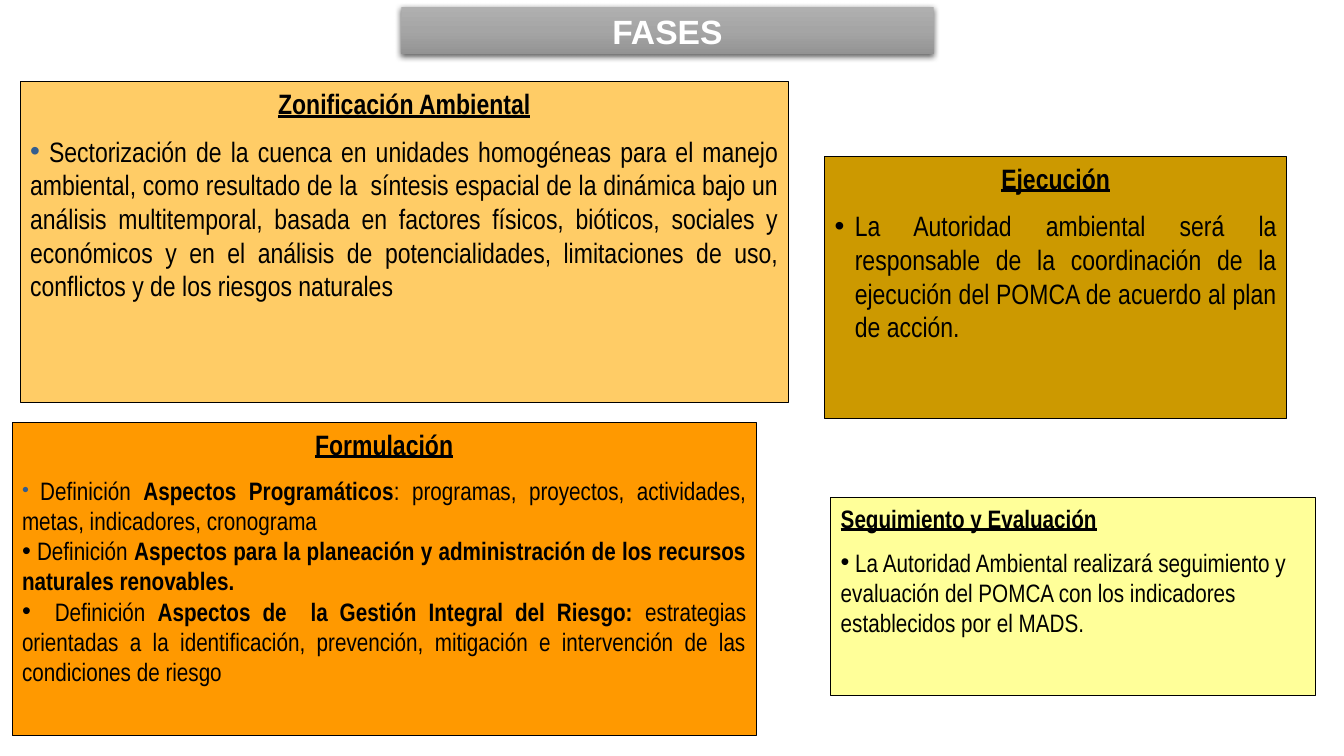
"""Build the slide that describes the phases of the plan."""
import copy

import pptx
import pptx.dml.color
import pptx.enum.shapes
import pptx.enum.text
import pptx.oxml
import pptx.oxml.ns
import pptx.util

Inches, Pt = pptx.util.Inches, pptx.util.Pt
ALIGN, ANCHOR = pptx.enum.text.PP_ALIGN, pptx.enum.text.MSO_ANCHOR
NS = pptx.oxml.ns.nsdecls("a")
BLACK, BLUE, WHITE = "000000", "335D8F", "FFFFFF"

TITLE = "FASES"
TITLE_BOX = (3.98, 0.07, 5.28, 0.47)
TITLE_STOPS = [(0, "AFAFAF"), (0.5, "A5A5A5"), (1, "939393")]

PHASES = [
    dict(head="Formulación", box=(0.12, 4.19, 7.38, 3.11), fill="FF9900",
         head_size=20, size=18, lead_size=14, head_align=ALIGN.CENTER,
         align=ALIGN.JUSTIFY, after=0, hang=0, items=[
             [(" ", "lead"), ("Definición ", ""), ("Aspectos Programáticos", "bold"),
              (": programas, proyectos, actividades, metas, indicadores, cronograma ", "")],
             [(" Definición ", ""),
              ("Aspectos para la planeación y administración de los recursos "
               "naturales renovables.", "bold")],
             [("  Definición ", ""),
              ("Aspectos de  la Gestión Integral del Riesgo: ", "bold"),
              ("estrategias orientadas a la identificación, prevención, mitigación e "
               "intervención de las condiciones de riesgo ", "")]]),
    dict(head="Ejecución", box=(8.18, 1.55, 4.58, 2.6), fill="CC9900",
         head_size=20, size=20, lead_size=20, head_align=ALIGN.CENTER,
         align=ALIGN.JUSTIFY, after=0, hang=0.2, items=[
             [("La Autoridad ambiental será la responsable de la coordinación de la "
               "ejecución del POMCA de acuerdo al plan de acción.", "")]]),
    dict(head="Seguimiento y Evaluación\t", box=(8.24, 4.94, 4.81, 1.96), fill="FFFF99",
         head_size=18, size=18, lead_size=18, head_align=ALIGN.LEFT,
         align=ALIGN.LEFT, after=10, hang=0, items=[
             [(" La Autoridad Ambiental realizará seguimiento y evaluación del POMCA "
               "con los indicadores establecidos por el MADS.", "")]]),
    dict(head="Zonificación Ambiental", box=(0.2, 0.81, 7.62, 3.18), fill="FFCC66",
         head_size=20, size=20, lead_size=20, head_align=ALIGN.CENTER,
         align=ALIGN.JUSTIFY, after=10, hang=0, items=[
             [(" ", "lead"),
              ("Sectorización de la cuenca en unidades homogéneas para el manejo "
               "ambiental, como resultado de la  síntesis espacial de la dinámica bajo un "
               "análisis multitemporal, basada en factores físicos, bióticos, sociales y "
               "económicos y en el análisis de potencialidades, limitaciones de uso, "
               "conflictos y de los riesgos naturales", "")]]),
]


def rgb(color):
    return pptx.dml.color.RGBColor.from_string(color)


def style(r, size, color=BLACK, bold=False, underline=False, name="Arial Narrow"):
    r.font.name, r.font.size = name, Pt(size)
    r.font.bold, r.font.underline = bold, underline
    r.font.color.rgb = rgb(color)


def add_bullet(p, hang):
    pPr = p._p.get_or_add_pPr()
    pPr.set("marL", str(Inches(hang)))
    pPr.set("indent", str(Inches(-hang)))
    pPr.append(pptx.oxml.parse_xml(f'<a:buFont {NS} typeface="Arial"/>'))
    pPr.append(pptx.oxml.parse_xml(f'<a:buChar {NS} char="•"/>'))


def add_title(s):
    sp = s.shapes.title
    sp.left, sp.top, sp.width, sp.height = map(Inches, TITLE_BOX)
    sp.fill.gradient()
    sp.fill.gradient_angle = 270
    stops = sp._element.spPr.find(".//" + pptx.oxml.ns.qn("a:gsLst"))
    stops.append(copy.deepcopy(stops[-1]))
    for stop, (position, color) in zip(sp.fill.gradient_stops, TITLE_STOPS):
        stop.position = position
        stop.color.rgb = rgb(color)
    sp._element.spPr.append(pptx.oxml.parse_xml(
        f'<a:effectLst {NS}><a:outerShdw blurRad="{Pt(4.5)}" dist="{Pt(1.5)}" '
        f'dir="5400000" algn="ctr" rotWithShape="0"><a:srgbClr val="{BLACK}">'
        '<a:alpha val="63000"/></a:srgbClr></a:outerShdw></a:effectLst>'))
    tf = sp.text_frame
    tf.text = TITLE
    tf.auto_size = pptx.enum.text.MSO_AUTO_SIZE.NONE
    tf.vertical_anchor = ANCHOR.MIDDLE
    p = tf.paragraphs[0]
    p.alignment = ALIGN.CENTER
    style(p.runs[0], 24, WHITE, bold=True, name="Arial")


def add_phase(s, phase):
    sp = s.shapes.add_shape(pptx.enum.shapes.MSO_SHAPE.RECTANGLE,
                            *map(Inches, phase["box"]))
    sp.shadow.inherit = False
    sp.fill.solid()
    sp.fill.fore_color.rgb = rgb(phase["fill"])
    sp.line.color.rgb = rgb(BLACK)
    sp.line.width = Pt(0.75)
    tf = sp.text_frame
    tf.word_wrap = True
    tf.vertical_anchor = ANCHOR.TOP
    p = tf.paragraphs[0]
    p.text = phase["head"]
    p.alignment = phase["head_align"]
    p.space_after = Pt(10)
    style(p.runs[0], phase["head_size"], bold=True, underline=True)
    for item in phase["items"]:
        p = tf.add_paragraph()
        p.alignment = phase["align"]
        p.space_after = Pt(phase["after"])
        add_bullet(p, phase["hang"])
        for text, kind in item:
            r = p.add_run()
            r.text = text
            if kind == "lead":
                style(r, phase["lead_size"], BLUE)
            else:
                style(r, phase["size"], bold=kind == "bold")


def main():
    prs = pptx.Presentation()
    prs.slide_width, prs.slide_height = Inches(13.33), Inches(7.5)
    s = prs.slides.add_slide(prs.slide_layouts[5])
    add_title(s)
    for phase in PHASES:
        add_phase(s, phase)
    prs.save("out.pptx")


if __name__ == "__main__":
    main()
